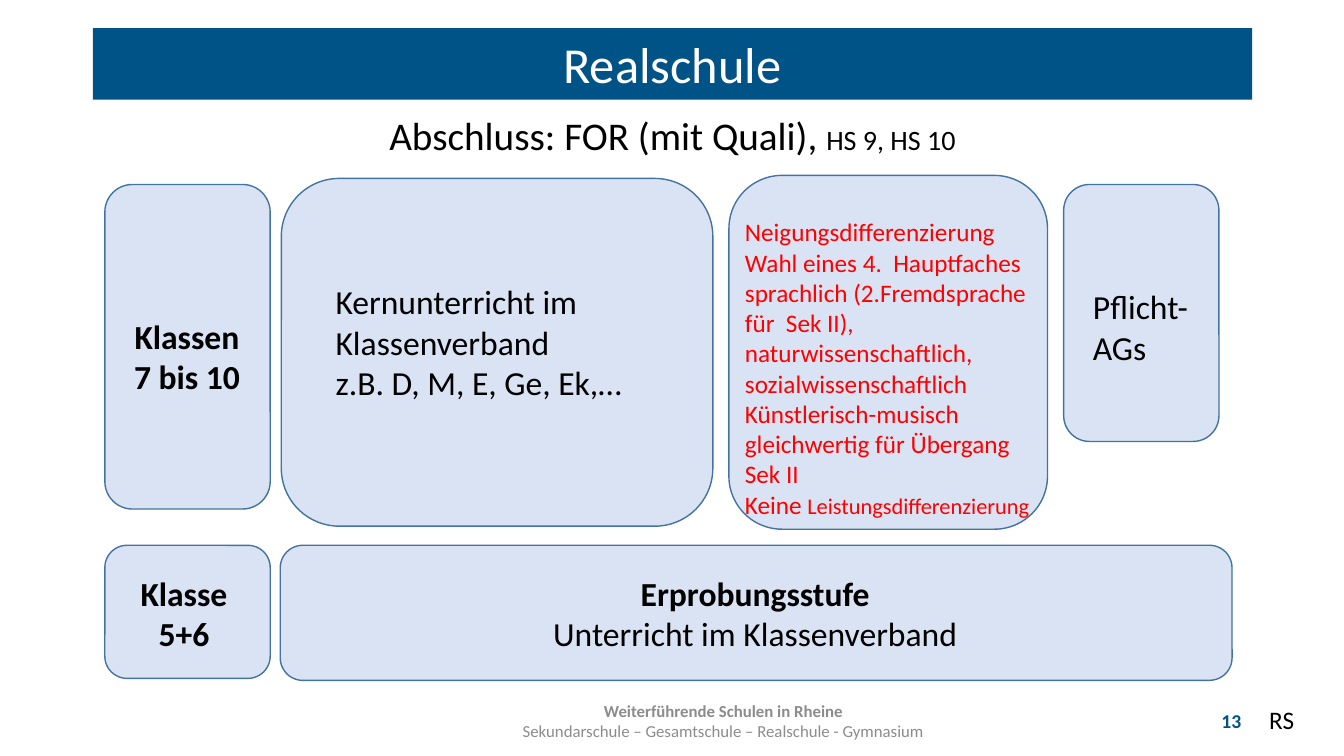
from pptx import Presentation
from pptx.dml.color import RGBColor
from pptx.enum import shapes, text
from pptx.oxml import xmlchemy as xml
from pptx.util import Inches, Pt

BLUE = RGBColor(0x00, 0x53, 0x86)
PALE = RGBColor(0xDA, 0xE3, 0xF3)
EDGE = RGBColor(0x43, 0x73, 0x9E)
RED = RGBColor(0xFF, 0x00, 0x00)
GREY = RGBColor(0x8C, 0x8C, 0x8C)
BLACK = RGBColor(0x00, 0x00, 0x00)
WHITE = RGBColor(0xFF, 0xFF, 0xFF)

LEFT = text.PP_ALIGN.LEFT
MID = text.PP_ALIGN.CENTER
RIGHT = text.PP_ALIGN.RIGHT


class Page:
    font = "Calibri"

    def __init__(self, deck):
        self.slide = deck.slides.add_slide(deck.slide_layouts[1])

    def style(self, run, size, color, bold=False):
        run.font.name = self.font
        run.font.size = Pt(size)
        run.font.bold = bold
        run.font.color.rgb = color

    def fill(self, frame, rows, size, color=BLACK, align=LEFT, bold=False):
        """Fill the frame with one paragraph per row and return the last one."""
        frame.text = "\n".join(rows)
        for para in frame.paragraphs:
            para.alignment = align
            for run in para.runs:
                self.style(run, size, color, bold)
        return para

    def tail(self, para, words, size, color=BLACK):
        """Append a run in its own size."""
        run = para.add_run()
        run.text = words
        self.style(run, size, color)

    def place(self, item, box):
        item.left, item.top, item.width, item.height = map(Inches, box)

    def title(self, words, box):
        head = self.slide.shapes.title
        self.place(head, box)
        head.fill.solid()
        head.fill.fore_color.rgb = BLUE
        frame = head.text_frame
        frame.auto_size = text.MSO_AUTO_SIZE.NONE
        frame.vertical_anchor = text.MSO_ANCHOR.BOTTOM
        self.fill(frame, [words], 36, WHITE, MID).line_spacing = 0.9

    def body(self, words, box):
        """Place the body text without a bullet and return its paragraph."""
        item = self.slide.placeholders[1]
        self.place(item, box)
        item.text_frame.auto_size = text.MSO_AUTO_SIZE.NONE
        para = self.fill(item.text_frame, [words], 28, align=MID)
        para.line_spacing = 0.9
        para.space_before = Pt(10)
        props = para._p.get_or_add_pPr()
        props.set("marL", "0")
        props.set("indent", "0")
        props.append(xml.OxmlElement("a:buNone"))
        return para

    def panel(self, box):
        card = self.slide.shapes.add_shape(
            shapes.MSO_SHAPE.ROUNDED_RECTANGLE, *map(Inches, box))
        card.shadow.inherit = False
        card.fill.solid()
        card.fill.fore_color.rgb = PALE
        card.line.color.rgb = EDGE
        card.line.width = Pt(1)

    def label(self, box, rows, size=24, color=BLACK, align=LEFT, bold=False,
              inset=0.05, anchor=text.MSO_ANCHOR.TOP):
        """Add a text box and return its last paragraph."""
        frame = self.slide.shapes.add_textbox(*map(Inches, box)).text_frame
        frame.word_wrap = True
        frame.margin_top = Inches(inset)
        frame.vertical_anchor = anchor
        return self.fill(frame, rows, size, color, align, bold)


def main():
    deck = Presentation()
    deck.slide_width, deck.slide_height = Inches(13.33), Inches(7.5)
    page = Page(deck)

    page.title("Realschule", (0.92, 0.28, 11.5, 0.71))
    goal = page.body("Abschluss: FOR (mit Quali), ", (0.92, 1.11, 11.5, 5.84))
    page.tail(goal, "HS 9, HS 10", 20)

    for box in [
        (2.78, 5.41, 9.44, 1.34),
        (1.04, 5.41, 1.64, 1.32),
        (1.04, 1.83, 1.64, 3.22),
        (2.79, 1.77, 4.28, 3.45),
        (7.23, 1.74, 3.16, 3.51),
        (10.55, 1.83, 1.54, 2.55),
    ]:
        page.panel(box)

    page.label((1.14, 5.63, 1.37, 0.91), ["Klasse 5+6"], align=MID, bold=True)
    page.label((1.12, 3.08, 1.47, 0.91), ["Klassen", "7 bis 10"],
               align=MID, bold=True)
    trial = page.label((3, 5.63, 8.98, 0.91),
                       ["Erprobungsstufe", "Unterricht im Klassenverband"],
                       align=MID, bold=True)
    trial.runs[0].font.bold = False
    page.label((3.23, 2.34, 3.77, 1.72),
               ["Kernunterricht im Klassenverband", "z.B. D, M, E, Ge, Ek,…"],
               inset=0.45)
    choice = page.label((7.29, 1.86, 3.1, 3.37), [
        "Neigungsdifferenzierung",
        "Wahl eines 4.  Hauptfaches",
        "sprachlich (2.Fremdsprache für  Sek II), naturwissenschaftlich, "
        "sozialwissenschaftlich",
        "Künstlerisch-musisch",
        "gleichwertig für Übergang Sek II",
        "Keine ",
    ], 18, RED, inset=0.29)
    page.tail(choice, "Leistungsdifferenzierung", 16, RED)
    page.label((10.74, 2.79, 1.23, 0.91), ["Pflicht-AGs"])

    center = text.MSO_ANCHOR.MIDDLE
    foot = page.label((4.42, 6.95, 5.51, 0.4), [
        "Weiterführende Schulen in Rheine",
        "Sekundarschule – Gesamtschule – Realschule - Gymnasium",
    ], 12, GREY, MID, True, anchor=center)
    foot.runs[0].font.bold = False
    page.label((11.95, 6.95, 0.46, 0.4), ["13"], 14, BLUE, RIGHT, True,
               anchor=center)
    page.label((12.49, 6.94, 0.84, 0.4), ["RS"], 18)

    deck.save("out.pptx")


if __name__ == "__main__":
    main()
